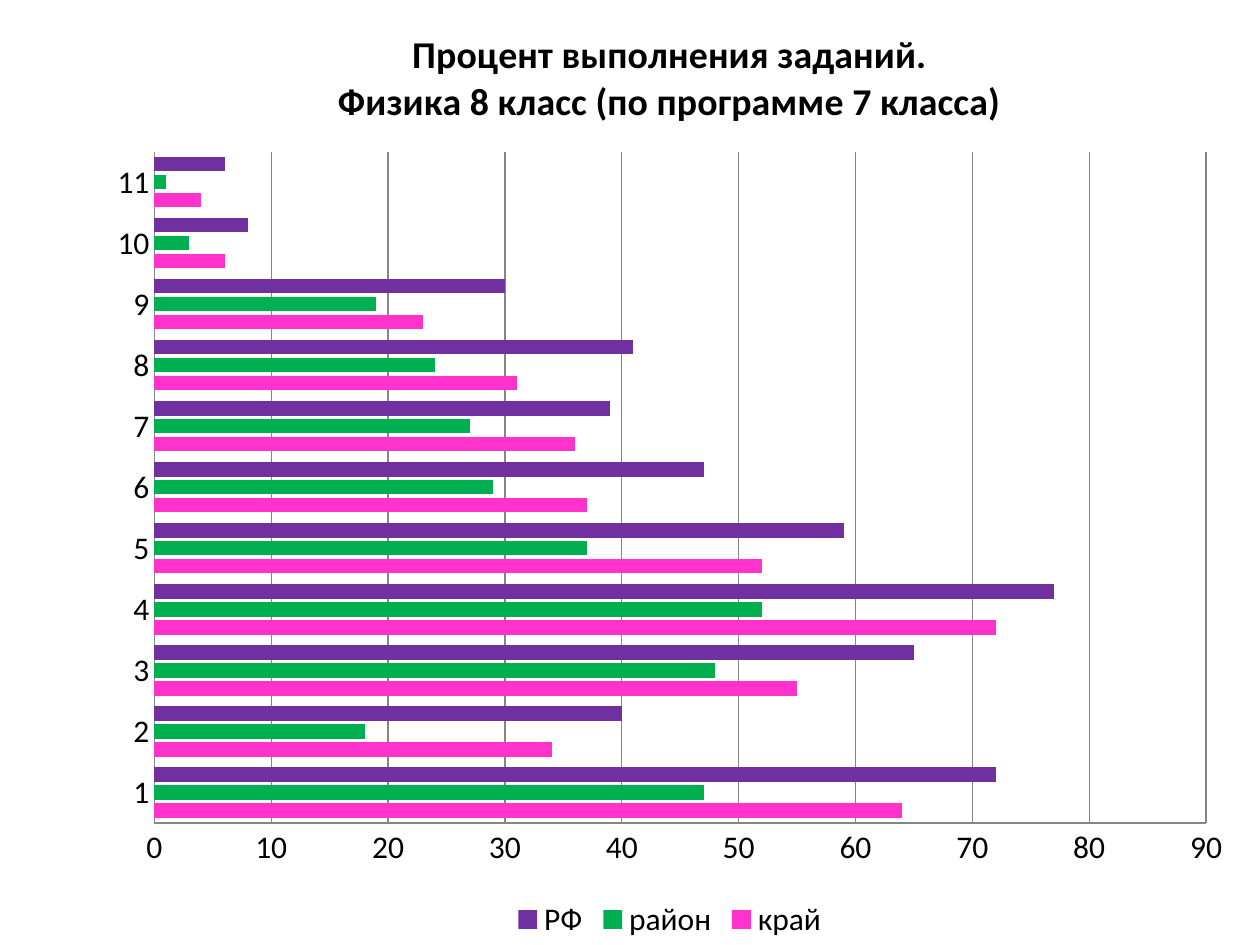
from dataclasses import dataclass

from pptx import Presentation
from pptx.chart.data import CategoryChartData
from pptx.dml.color import RGBColor
from pptx.enum.chart import XL_CHART_TYPE, XL_LEGEND_POSITION, XL_TICK_MARK
from pptx.util import Pt

FONT = "Calibri"
BLACK = "000000"
GRAY = "868686"


@dataclass
class ResultSeries:
    name: str
    color: str
    values: tuple[int, ...]


RESULTS = [
    ResultSeries("край", "FF33CC", (64, 34, 55, 72, 52, 37, 36, 31, 23, 6, 4)),
    ResultSeries("район", "00B050", (47, 18, 48, 52, 37, 29, 27, 24, 19, 3, 1)),
    ResultSeries("РФ", "7030A0", (72, 40, 65, 77, 59, 47, 39, 41, 30, 8, 6)),
]
TITLE_LINES = ["Процент выполнения заданий.", "Физика 8 класс (по программе 7 класса)"]


def rgb(color: str) -> RGBColor:
    return RGBColor.from_string(color)


def format_font(font, size: float, bold: bool = False, color: str = BLACK) -> None:
    font.name = FONT
    font.size = Pt(size)
    font.bold = bold
    font.color.rgb = rgb(color)


def write_lines(text_frame, lines: list[str], **font_format) -> None:
    for index, line in enumerate(lines):
        paragraph = text_frame.add_paragraph() if index else text_frame.paragraphs[0]
        run = paragraph.add_run()
        run.text = line
        format_font(run.font, **font_format)


def format_line(line, color: str = GRAY, width: float = 0.75) -> None:
    line.color.rgb = rgb(color)
    line.width = Pt(width)


def add_results_chart(slide, results: list[ResultSeries]) -> None:
    chart_data = CategoryChartData()
    chart_data.categories = [str(task) for task in range(1, 12)]
    for result in results:
        chart_data.add_series(result.name, result.values)
    chart = slide.shapes.add_chart(
        XL_CHART_TYPE.BAR_CLUSTERED, Pt(54), Pt(0), Pt(657.5), Pt(540), chart_data
    ).chart
    format_font(chart.font, size=18)

    chart.has_title = True
    write_lines(chart.chart_title.text_frame, TITLE_LINES, size=21.6, bold=True)
    chart.chart_title.include_in_layout = False

    chart.has_legend = True
    chart.legend.position = XL_LEGEND_POSITION.BOTTOM
    chart.legend.include_in_layout = False

    for axis in (chart.category_axis, chart.value_axis):
        axis.major_tick_mark = XL_TICK_MARK.NONE
        axis.minor_tick_mark = XL_TICK_MARK.NONE
        format_line(axis.format.line)
    chart.value_axis.minimum_scale = 0
    chart.value_axis.maximum_scale = 90
    chart.value_axis.major_unit = 10
    chart.value_axis.has_major_gridlines = True
    format_line(chart.value_axis.major_gridlines.format.line)

    plot = chart.plots[0]
    plot.gap_width = 75
    plot.overlap = -25
    plot.vary_by_categories = False
    for series, result in zip(plot.series, results):
        series.format.fill.solid()
        series.format.fill.fore_color.rgb = rgb(result.color)


def main() -> None:
    presentation = Presentation()
    presentation.slide_width = Pt(720)
    presentation.slide_height = Pt(540)
    slide = presentation.slides.add_slide(presentation.slide_layouts[6])
    add_results_chart(slide, RESULTS)
    presentation.save("out.pptx")


if __name__ == "__main__":
    main()
